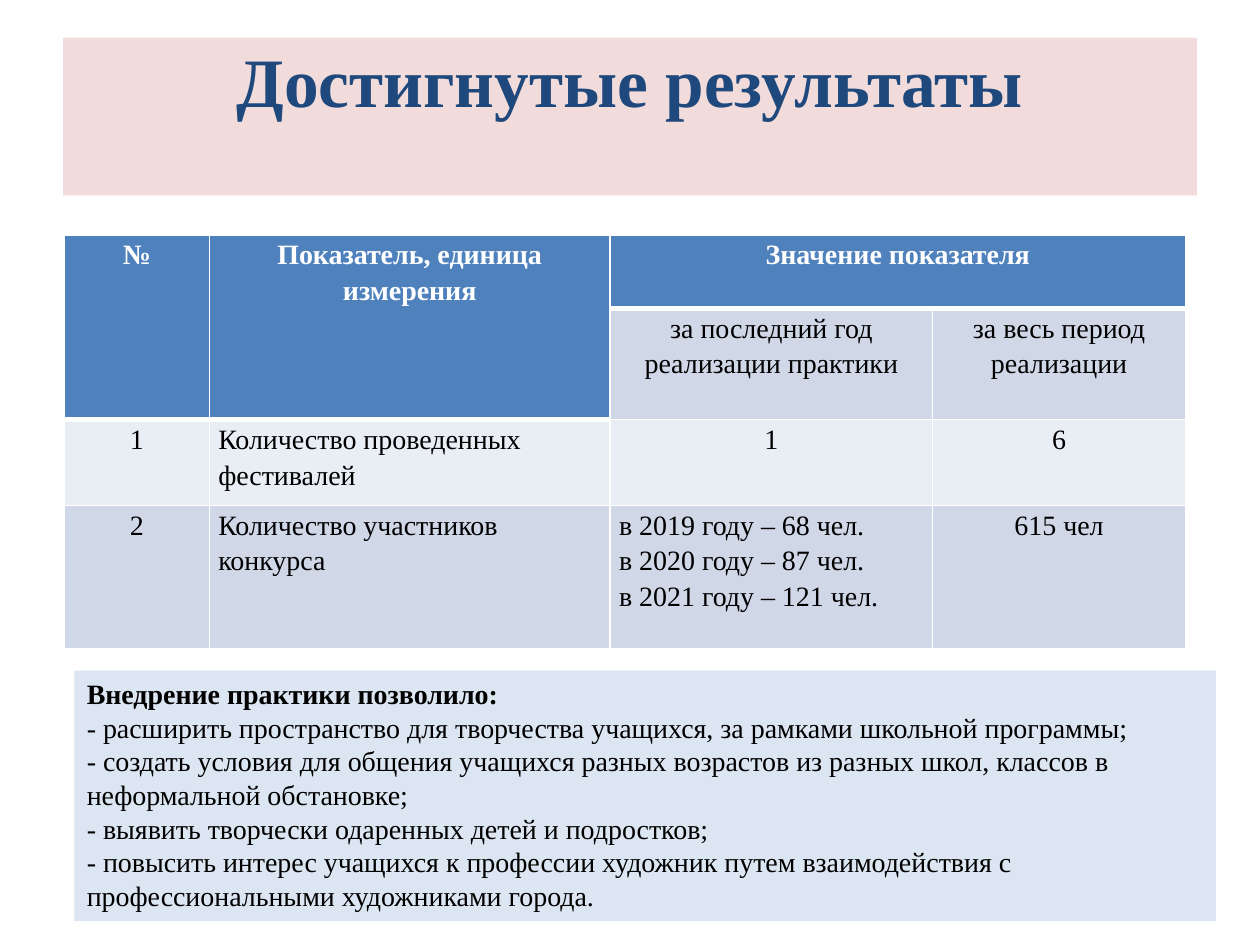
from lxml import etree
from pptx import Presentation
from pptx.dml.color import RGBColor as RGB
from pptx.enum.shapes import MSO_SHAPE as Shape
from pptx.enum.text import MSO_ANCHOR as Anchor, PP_ALIGN as Align
from pptx.oxml.ns import qn
from pptx.util import Cm, Pt

THEME = dict(
    font="Times New Roman", title_size=39.6, text_size=16,
    title="1F497D", text="000000", white="FFFFFF",
    title_fill="F2DCDB", box_fill="DCE6F2",
    header="4F81BD", band_dark="D0D8E8", band_light="E9EDF4",
)

TITLE = "Достигнутые результаты"
ROWS = [
    ["№", "Показатель, единица измерения", "Значение показателя", ""],
    ["", "", "за последний год реализации практики", "за весь период реализации"],
    ["1", "Количество проведенных фестивалей", "1", "6"],
    ["2", "Количество участников конкурса",
     "в 2019 году – 68 чел.\nв 2020 году – 87 чел.\nв 2021 году – 121 чел.", "615 чел"],
]
MERGES = [((0, 0), (1, 0)), ((0, 1), (1, 1)), ((0, 2), (0, 3))]
HEADER_CELLS = {(0, 0), (0, 1), (0, 2), (0, 3), (1, 0), (1, 1)}
LEFT_CELLS = {(2, 1), (3, 1), (3, 2)}
ROW_FILLS = ["header", "band_dark", "band_light", "band_dark"]
COL_WIDTHS = [2.92, 8.08, 6.5, 5.1]
ROW_HEIGHTS = [1.48, 2.24, 1.73, 2.88]
RESULTS_HEAD = "Внедрение практики позволило:"
RESULTS = [
    "- расширить пространство для творчества учащихся, за рамками школьной программы;",
    "- создать условия для общения учащихся разных возрастов из разных школ, классов в неформальной обстановке;",
    "- выявить творчески одаренных детей и подростков;",
    "- повысить интерес учащихся к профессии художник путем взаимодействия с профессиональными художниками города.",
]


def color(name):
    return RGB.from_string(THEME[name])


def paint(fill, name):
    fill.solid()
    fill.fore_color.rgb = color(name)


def write(tf, text, size=THEME["text_size"], ink="text", bold=False,
          align=Align.LEFT, spacing=None, append=False):
    for i, line in enumerate(text.split("\n")):
        p = tf.add_paragraph() if append or i else tf.paragraphs[0]
        p.alignment = align
        if spacing:
            p.line_spacing = spacing
        r = p.add_run()
        r.text = line
        r.font.name = THEME["font"]
        r.font.size = Pt(size)
        r.font.bold = bold
        r.font.color.rgb = color(ink)


def set_borders(cell, **widths):
    tc_pr = cell._tc.get_or_add_tcPr()
    for i, side in enumerate("LRTB"):
        ln = etree.Element(qn(f"a:ln{side}"), w=str(Pt(widths.get(side, 1))))
        fill = etree.SubElement(ln, qn("a:solidFill"))
        etree.SubElement(fill, qn("a:srgbClr"), val=THEME["white"])
        tc_pr.insert(i, ln)


def add_title(slide):
    sp = slide.shapes.title
    sp.left, sp.top, sp.width, sp.height = Cm(1.27), Cm(0.76), Cm(22.86), Cm(3.18)
    paint(sp.fill, "title_fill")
    tf = sp.text_frame
    tf.vertical_anchor = Anchor.TOP
    tf.margin_top = 0
    write(tf, TITLE, size=THEME["title_size"], ink="title", bold=True, align=Align.CENTER)


def add_indicators(slide):
    table = slide.shapes.add_table(
        len(ROWS), len(COL_WIDTHS), Cm(1.3), Cm(4.74),
        Cm(sum(COL_WIDTHS)), Cm(sum(ROW_HEIGHTS))).table
    for col, width in zip(table.columns, COL_WIDTHS):
        col.width = Cm(width)
    for row, height in zip(table.rows, ROW_HEIGHTS):
        row.height = Cm(height)
    for first, last in MERGES:
        table.cell(*first).merge(table.cell(*last))
    for r, row in enumerate(ROWS):
        for c, text in enumerate(row):
            cell = table.cell(r, c)
            header = (r, c) in HEADER_CELLS
            below_header = not header and (r - 1, c) in HEADER_CELLS
            cell.margin_left = cell.margin_right = Cm(0.18)
            cell.margin_top = cell.margin_bottom = 0
            paint(cell.fill, "header" if header else ROW_FILLS[r])
            set_borders(cell, T=3 if below_header else 1, B=3 if header else 1)
            if text:
                write(cell.text_frame, text, ink="white" if header else "text",
                      bold=header, spacing=1.15,
                      align=Align.LEFT if (r, c) in LEFT_CELLS else Align.CENTER)


def add_results(slide):
    sp = slide.shapes.add_shape(Shape.RECTANGLE, Cm(1.5), Cm(13.52), Cm(23.01), Cm(5.05))
    sp.shadow.inherit = False
    sp.line.fill.background()
    paint(sp.fill, "box_fill")
    tf = sp.text_frame
    tf.word_wrap = True
    tf.vertical_anchor = Anchor.TOP
    write(tf, RESULTS_HEAD, bold=True)
    write(tf, "\n".join(RESULTS), append=True)


def main():
    prs = Presentation()
    prs.slide_width, prs.slide_height = Cm(25.4), Cm(19.05)
    slide = prs.slides.add_slide(prs.slide_layouts.get_by_name("Title Only"))
    add_title(slide)
    add_indicators(slide)
    add_results(slide)
    prs.save("out.pptx")


if __name__ == "__main__":
    main()
